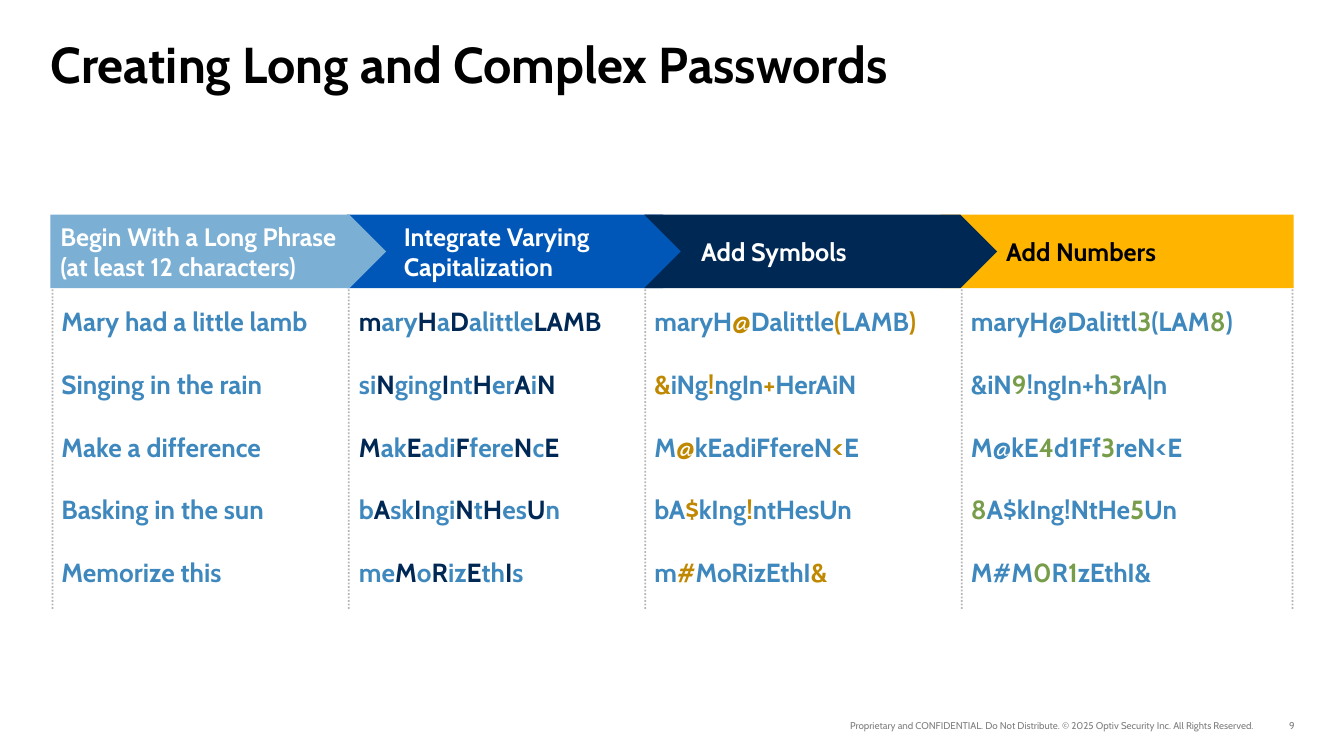
from lxml import etree
from pptx import Presentation
from pptx.dml.color import RGBColor
from pptx.enum.dml import MSO_LINE
from pptx.enum.shapes import MSO_CONNECTOR, MSO_SHAPE
from pptx.enum.text import MSO_ANCHOR, PP_ALIGN
from pptx.oxml.ns import qn
from pptx.util import Inches, Pt

FONT = "Cabin"
BLUE, NAVY, GOLD, GREEN = "3E88BE", "002855", "BF8800", "789D4A"
WHITE, BLACK = "FFFFFF", "000000"
TOP, MIDDLE, BOTTOM = MSO_ANCHOR.TOP, MSO_ANCHOR.MIDDLE, MSO_ANCHOR.BOTTOM
LEFT, RIGHT = PP_ALIGN.LEFT, PP_ALIGN.RIGHT
CHEVRON, PENTAGON = MSO_SHAPE.CHEVRON, MSO_SHAPE.PENTAGON
STRAIGHT = MSO_CONNECTOR.STRAIGHT
DOTTED = MSO_LINE.ROUND_DOT
HEADER_TOP, HEADER_HEIGHT = 2.13, 0.73


def rgb(value):
    return RGBColor.from_string(value)


def write(sp, lines, size, colors, insets, anchor, align=LEFT, bold=True):
    tf = sp.text_frame
    tf.word_wrap = True
    tf.vertical_anchor = anchor
    tf.margin_left, tf.margin_top, tf.margin_right, tf.margin_bottom = map(Inches, insets)
    tf.text = "\n".join([""] * len(lines))
    for p, line in zip(tf.paragraphs, lines):
        p.alignment = align
        for i, part in enumerate(line.split("~")):
            if part:
                r = p.add_run()
                r.text = part
                r.font.name = FONT
                r.font.size = Pt(size)
                r.font.bold = bold
                r.font.color.rgb = rgb(colors[i % 2])
    return tf


prs = Presentation()
prs.slide_width = Inches(13.33)
prs.slide_height = Inches(7.5)
s = prs.slides.add_slide(prs.slide_layouts[5])

title = s.shapes.title
title.left, title.top, title.width, title.height = map(Inches, (0.5, 0.4, 12.33, 0.56))
tf = write(title, ["Creating Long and Complex Passwords"], 36, [BLACK], (0, 0, 0, 0), TOP)
tf.paragraphs[0].line_spacing = 0.9

for x in (0.52, 3.46, 6.4, 9.54, 12.82):
    line = s.shapes.add_connector(STRAIGHT, Inches(x), Inches(6.04), Inches(x), Inches(2.84))
    line.line.color.rgb = rgb("595959")
    line.line.width = Pt(1.25)
    line.line.dash_style = DOTTED
    color = line.line._ln.find(".//" + qn("a:srgbClr"))
    etree.SubElement(color, qn("a:alpha"), val="43000")
    etree.SubElement(line._element.spPr, qn("a:effectLst"))

numbers_points = [(12.83, 2.13), (12.83, 2.86), (9.33, 2.86), (9.62, 2.49)]
builder = s.shapes.build_freeform(Inches(9.33), Inches(2.13))
builder.add_line_segments([(Inches(x), Inches(y)) for x, y in numbers_points], close=True)
numbers = builder.convert_to_shape()

capitals, phrase, symbols = [
    s.shapes.add_shape(kind, Inches(x), Inches(HEADER_TOP), Inches(w), Inches(HEADER_HEIGHT))
    for kind, x, w in ((CHEVRON, 3.44, 3.5), (PENTAGON, 0.5, 3.33), (CHEVRON, 6.39, 3.5))
]

headers = [
    (phrase, ["Begin With a Long Phrase", "(at least 12 characters)"], "7BAFD4", WHITE, 0.1),
    (capitals, ["Integrate Varying Capitalization"], "0057B8", WHITE, 0.2),
    (symbols, ["Add Symbols"], NAVY, WHITE, 0.2),
    (numbers, ["Add Numbers"], "FFB500", BLACK, 0.65),
]
for sp, lines, fill, color, inset in headers:
    sp.shadow.inherit = False
    sp.fill.solid()
    sp.fill.fore_color.rgb = rgb(fill)
    sp.line.fill.background()
    write(sp, lines, 18, [color], (inset, 0.05, 0.1, 0.05), MIDDLE)

columns = [
    (0.61, 2.7, BLUE, [
        "Mary had a little lamb", "Singing in the rain", "Make a difference",
        "Basking in the sun", "Memorize this"]),
    (3.56, 2.62, NAVY, [
        "~m~ary~H~a~D~alittle~LAMB", "si~N~ging~I~nt~H~er~A~i~N",
        "~M~ak~E~adi~F~fere~N~c~E", "b~A~sk~I~ngi~N~t~H~es~U~n",
        "me~M~o~R~iz~E~th~I~s"]),
    (6.49, 2.83, GOLD, [
        "maryH~@~Dalittle~(~LAMB~)", "~&~iNg~!~ngIn~+~HerAiN",
        "M~@~kEadiFfereN~<~E", "bA~$~kIng~!~ntHesUn", "m~#~MoRizEthI~&"]),
    (9.63, 3.03, GREEN, [
        "maryH@Dalittl~3~(LAM~8~)", "&iN~9~!ngIn+h~3~rA|n",
        "M@kE~4~d1Ff~3~reN<E", "~8~A$kIng!NtHe~5~Un", "M#M~0~R~1~zEthI&"]),
]
for x, w, accent, lines in columns:
    sp = s.shapes.add_textbox(Inches(x), Inches(2.98), Inches(w), Inches(2.93))
    tf = write(sp, lines, 18.7, (BLUE, accent), (0, 0.05, 0, 0.05), TOP)
    for p in tf.paragraphs[:-1]:
        p.space_after = Pt(22.4)

footers = [
    (7.81, 4.62, "Proprietary and CONFIDENTIAL. Do Not Distribute. "
                 "© 2025 Optiv Security Inc. All Rights Reserved."),
    (12.43, 0.41, "9"),
]
for x, w, text in footers:
    sp = s.shapes.add_textbox(Inches(x), Inches(7.06), Inches(w), Inches(0.2))
    write(sp, [text], 7, [BLACK], (0, 0, 0, 0), BOTTOM, RIGHT, False)
    color = sp._element.find(".//" + qn("a:srgbClr"))
    etree.SubElement(color, qn("a:alpha"), val="50000")

prs.save("out.pptx")
